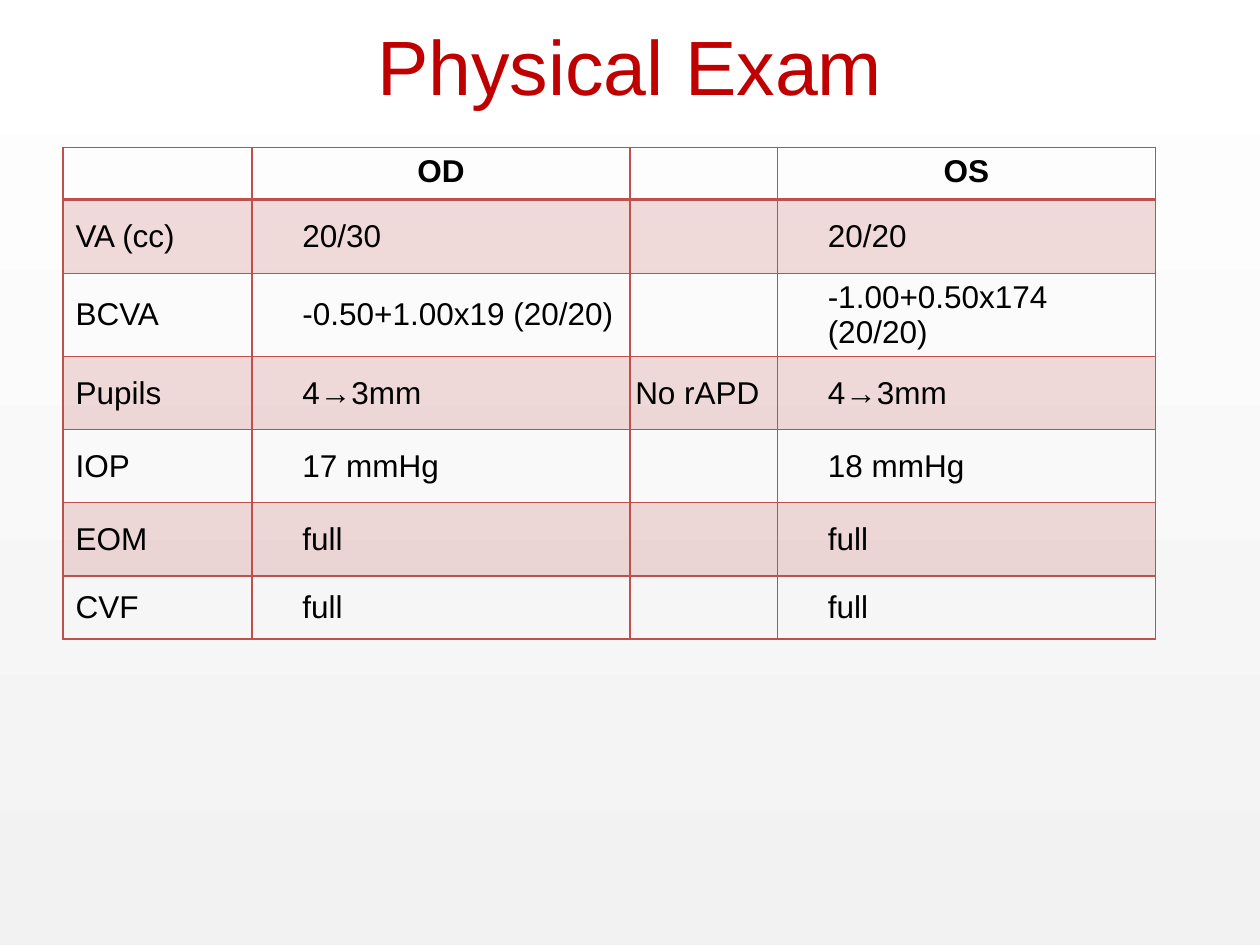
from lxml.etree import SubElement
from pptx import Presentation
from pptx.dml.color import RGBColor
from pptx.enum.shapes import MSO_SHAPE as Shape
from pptx.enum.text import MSO_ANCHOR as Anchor, PP_ALIGN as Align
from pptx.oxml import parse_xml
from pptx.oxml.ns import nsdecls, qn
from pptx.util import Inches, Pt

BLACK = RGBColor(0x00, 0x00, 0x00)
WHITE = RGBColor(0xFF, 0xFF, 0xFF)
PALE_GRAY = RGBColor(0xF2, 0xF2, 0xF2)
TITLE_RED = RGBColor(0xC0, 0x00, 0x00)
TABLE_RED = RGBColor(0xC0, 0x50, 0x4D)

COLUMNS = [1.5, 3, 1.17, 3]
ROWS = [0.41, 0.59, 0.59, 0.58, 0.58, 0.58, 0.5]
EXAM = [
    ["", "OD", "", "OS"],
    ["VA (cc)", "20/30", "", "20/20"],
    ["BCVA", "-0.50+1.00x19 (20/20)", "", "-1.00+0.50x174 (20/20)"],
    ["Pupils", "4→3mm", "No rAPD", "4→3mm"],
    ["IOP", "17 mmHg", "", "18 mmHg"],
    ["EOM", "full", "", "full"],
    ["CVF", "full", "", "full"],
]
LEFT_INSETS = [0.1, 0.4, 0, 0.4]
MIDDLE_COLUMN = 2


def write(frame, text, size=18, color=BLACK, bold=False, align=Align.LEFT):
    para = frame.paragraphs[0]
    para.alignment = align
    span = para.add_run()
    span.text = text
    span.font.name = "Arial"
    span.font.size = Pt(size)
    span.font.bold = bold
    span.font.color.rgb = color


def set_border(cell, widths):
    """Draw the cell sides; widths maps L, R, T and B to points."""
    properties = cell._tc.get_or_add_tcPr()
    for index, (side, width) in enumerate(widths.items()):
        properties.insert(index, parse_xml(
            f'<a:ln{side} {nsdecls("a")} w="{Pt(width)}"><a:solidFill>'
            f'<a:srgbClr val="{TABLE_RED}"/></a:solidFill></a:ln{side}>'))


def set_tint(cell, color, percent):
    cell.fill.solid()
    cell.fill.fore_color.rgb = color
    solid = cell._tc.tcPr.find(qn("a:solidFill"))
    SubElement(solid[0], qn("a:alpha"), val=str(percent * 1000))


class SlideBuilder:
    def __init__(self, deck):
        self.width, self.height = deck.slide_width, deck.slide_height
        self.page = deck.slides.add_slide(deck.slide_layouts[5])

    def backdrop(self, bottom, top):
        box = self.page.shapes.add_shape(
            Shape.RECTANGLE, 0, 0, self.width, self.height)
        box.shadow.inherit = False
        box.line.fill.background()
        box.fill.gradient()
        box.fill.gradient_angle = 90
        for stop, color in zip(box.fill.gradient_stops, (bottom, top)):
            stop.color.rgb = color

    def title(self, text):
        title = self.page.shapes.title
        title.left, title.top = int(self.width * 0.05), Inches(-0.11)
        title.width, title.height = int(self.width * 0.9), Inches(1.25)
        title.text_frame.vertical_anchor = Anchor.MIDDLE
        write(title.text_frame, text, size=44, color=TITLE_RED,
              align=Align.CENTER)
        # Bring the title in front of the backdrop
        title.element.getparent().append(title.element)

    def table(self, values, left, top):
        table = self.page.shapes.add_table(
            len(ROWS), len(COLUMNS), Inches(left), Inches(top),
            Inches(sum(COLUMNS)), Inches(sum(ROWS))).table
        table.first_row = table.horz_banding = False
        for column, width in zip(table.columns, COLUMNS):
            column.width = Inches(width)
        for row, height in zip(table.rows, ROWS):
            row.height = Inches(height)
        for row, texts in enumerate(values):
            for column, text in enumerate(texts):
                self.cell(table.cell(row, column), row, column, text)

    def cell(self, cell, row, column, text):
        header = row == 0
        if text:
            centered = header or column == MIDDLE_COLUMN
            write(cell.text_frame, text, bold=header,
                  align=Align.CENTER if centered else Align.LEFT)
        if text and not header:
            cell.vertical_anchor = Anchor.MIDDLE
            cell.margin_left = Inches(LEFT_INSETS[column])
        # Tint every other row, and set a thicker rule under the header
        if row % 2:
            set_tint(cell, TABLE_RED, 20)
        else:
            cell.fill.background()
        set_border(cell, {"L": 1, "R": 1, "T": 2 if row == 1 else 1,
                          "B": 2 if header else 1})


def main():
    deck = Presentation()
    deck.slide_width, deck.slide_height = Inches(10), Inches(7.5)
    slide = SlideBuilder(deck)
    slide.backdrop(PALE_GRAY, WHITE)
    slide.table(EXAM, left=0.5, top=1.17)
    slide.title("Physical Exam")
    deck.save("out.pptx")


if __name__ == "__main__":
    main()
